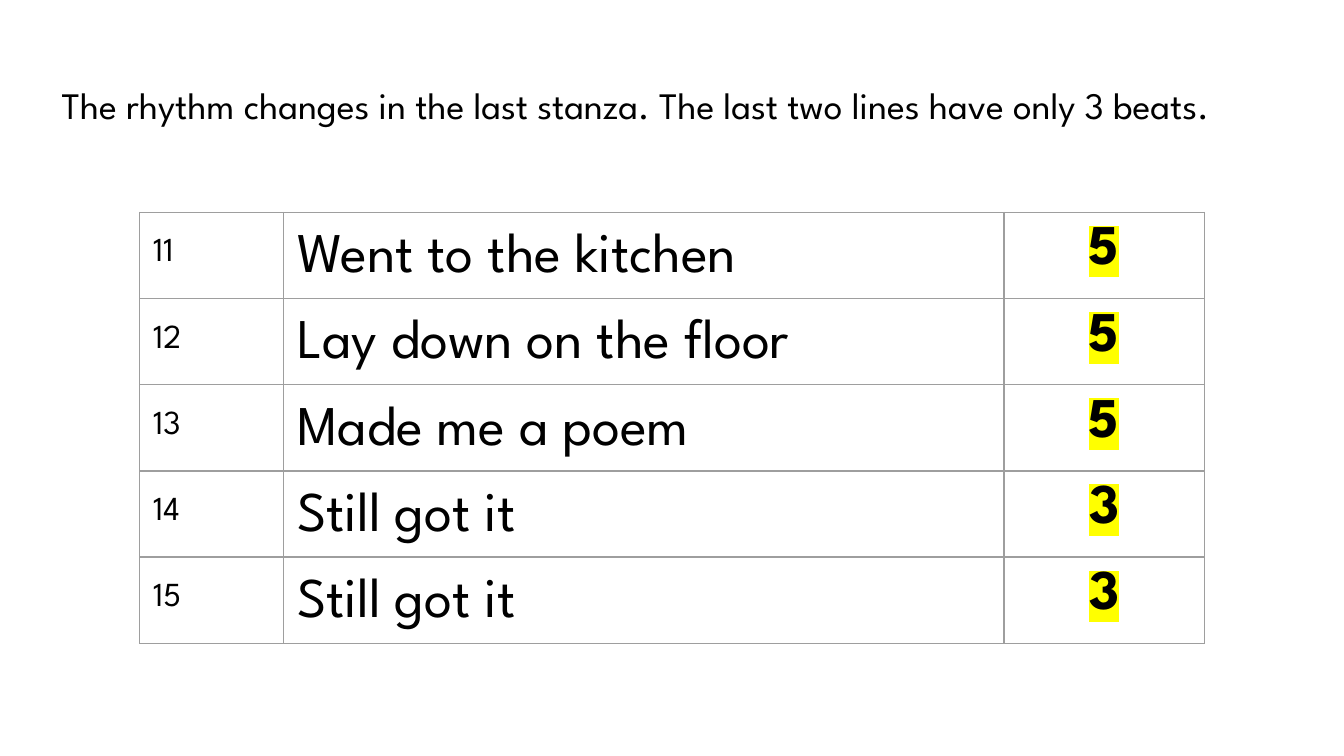
import pptx
import pptx.dml.color
import pptx.enum.text
import pptx.oxml
import pptx.oxml.ns
import pptx.util
from dataclasses import dataclass
from pptx.util import Inches

ALIGN = pptx.enum.text.PP_ALIGN


@dataclass(frozen=True)
class Theme:
    font: str = "League Spartan"
    text: str = "000000"
    border: str = "9E9E9E"
    highlight: str = "FFFF00"
    heading_size: int = 20
    number_size: int = 18
    verse_size: int = 30
    border_width: float = 0.75
    line_spacing: float = 1.15
    inset: float = 0.1


THEME = Theme()

COLUMN_WIDTHS = (1.07, 5.36, 1.49)
ROW_HEIGHT = 0.64
FIRST_LINE_NUMBER = 11
STANZA = (
    ("Went to the kitchen", 5),
    ("Lay down on the floor", 5),
    ("Made me a poem", 5),
    ("Still got it", 3),
    ("Still got it", 3),
)
COLUMN_FORMATS = (
    {"size": THEME.number_size, "top_inset": 0.16},
    {"size": THEME.verse_size},
    {"size": THEME.verse_size, "bold": True, "alignment": ALIGN.CENTER,
     "line_spacing": 1.0, "highlight": THEME.highlight},
)


def drawing_element(tag, content, attributes=""):
    namespace = pptx.oxml.ns.nsdecls("a")
    return pptx.oxml.parse_xml(
        f"<a:{tag} {namespace} {attributes}>{content}</a:{tag}>")


def write_text(holder, text_frame, text, size, bold=False, alignment=ALIGN.LEFT,
               line_spacing=THEME.line_spacing, highlight=None,
               top_inset=THEME.inset):
    """Fill a text frame; holder is the cell or frame that owns the insets."""
    for side in ("left", "right", "bottom"):
        setattr(holder, f"margin_{side}", Inches(THEME.inset))
    holder.margin_top = Inches(top_inset)
    holder.vertical_anchor = pptx.enum.text.MSO_ANCHOR.TOP
    text_frame.word_wrap = True

    paragraph = text_frame.paragraphs[0]
    paragraph.alignment = alignment
    paragraph.line_spacing = line_spacing
    run = paragraph.add_run()
    run.text = text
    font_format = {"name": THEME.font, "size": pptx.util.Pt(size), "bold": bold}
    for name, value in font_format.items():
        setattr(run.font, name, value)
    run.font.color.rgb = pptx.dml.color.RGBColor.from_string(THEME.text)
    if highlight:
        fill = run.font._element.find(pptx.oxml.ns.qn("a:solidFill"))
        fill.addnext(drawing_element("highlight", f'<a:srgbClr val="{highlight}"/>'))


def style_cell(cell):
    cell.fill.background()
    properties = cell._tc.get_or_add_tcPr()
    width = pptx.util.Pt(THEME.border_width)
    for index, side in enumerate(("lnL", "lnR", "lnT", "lnB")):
        properties.insert(index, drawing_element(
            side,
            f'<a:solidFill><a:srgbClr val="{THEME.border}"/></a:solidFill>',
            f'w="{width}"'))


def add_heading(slide, left, top, width, height):
    box = slide.shapes.add_textbox(
        Inches(left), Inches(top), Inches(width), Inches(height))
    write_text(
        box.text_frame, box.text_frame,
        "The rhythm changes in the last stanza. "
        "The last two lines have only 3 beats.",
        THEME.heading_size)


def add_stanza_table(slide, left, top):
    """Number, verse and beat count for each line of the stanza."""
    table = slide.shapes.add_table(
        len(STANZA), len(COLUMN_WIDTHS), Inches(left), Inches(top),
        Inches(sum(COLUMN_WIDTHS)), Inches(ROW_HEIGHT * len(STANZA))).table
    table.first_row = False
    table.horz_banding = False
    for column, width in zip(table.columns, COLUMN_WIDTHS):
        column.width = Inches(width)
    for number, (row, line) in enumerate(zip(table.rows, STANZA), FIRST_LINE_NUMBER):
        row.height = Inches(ROW_HEIGHT)
        for cell, value, text_format in zip(row.cells, (number, *line), COLUMN_FORMATS):
            style_cell(cell)
            write_text(cell, cell.text_frame, str(value), **text_format)


def main():
    presentation = pptx.Presentation()
    presentation.slide_width = Inches(10)
    presentation.slide_height = presentation.slide_width * 9 // 16
    slide = presentation.slides.add_slide(presentation.slide_layouts[6])
    add_stanza_table(slide, 1.04, 1.58)
    add_heading(slide, 0.36, 0.46, 9.28, 0.88)
    presentation.save("out.pptx")


if __name__ == "__main__":
    main()
